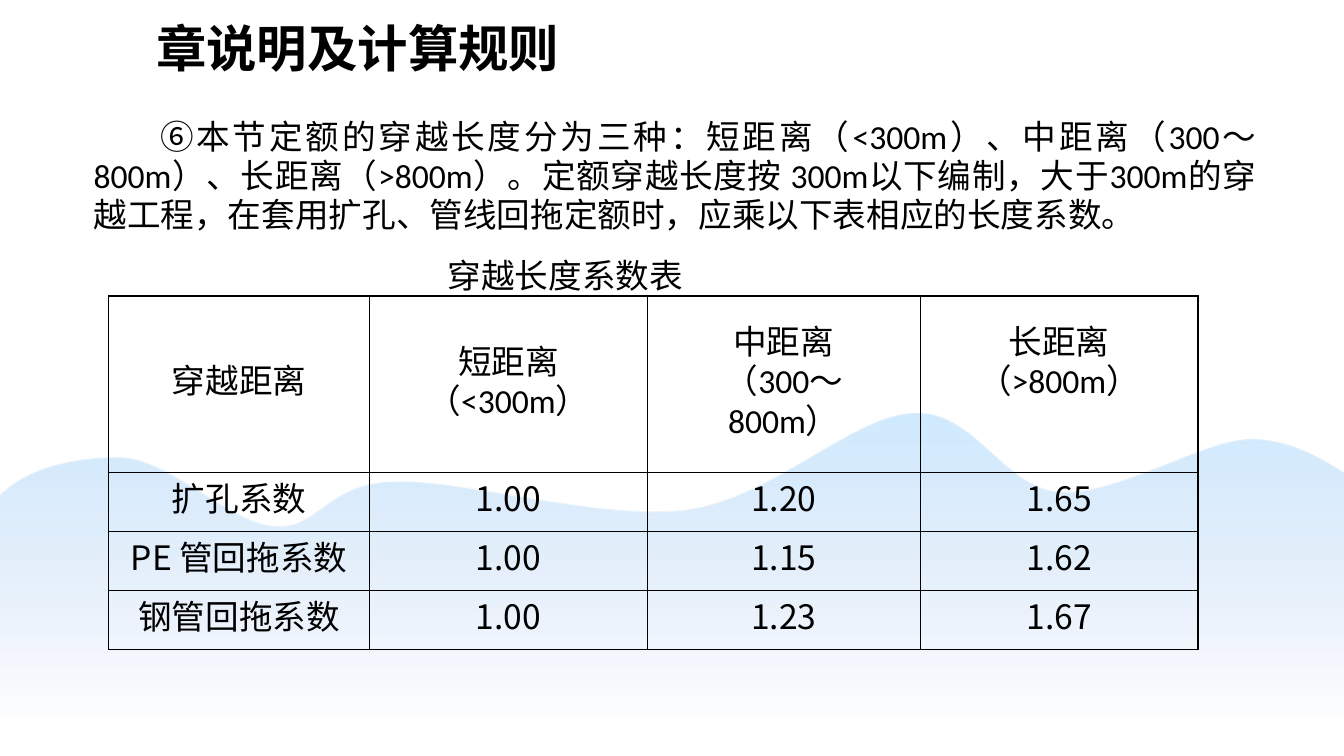
import pptx
import pptx.dml.color
import pptx.enum.text
import pptx.util
from lxml import etree
from pptx.oxml.ns import qn

Pt = pptx.util.Pt
ALIGN = pptx.enum.text.PP_ALIGN
CJK_FONT = "Noto Sans CJK SC"


def color(hex_string):
    return pptx.dml.color.RGBColor.from_string(hex_string)


def style(paragraph, size, font_name, alignment, line_spacing):
    font = paragraph.font
    font.size, font.name = Pt(size), font_name
    font.color.rgb = color("000000")
    east_asian = etree.Element(qn("a:ea"), typeface=CJK_FONT)
    font._element.find(qn("a:latin")).addnext(east_asian)
    paragraph.alignment = alignment
    paragraph.line_spacing = line_spacing


presentation = pptx.Presentation()
presentation.slide_width, presentation.slide_height = Pt(960), Pt(540)
slide = presentation.slides.add_slide(presentation.slide_layouts[6])

# Wave: each curve is two control points and an end point
wave_left, wave_top, wave_width, wave_height = -57.6, 295.2, 1059.8, 308.2
wave_start = (-16.6, 378.7)
wave_curves = [
    ((0, 336.2), (48.2, 326.9), (84.2, 326.9)),
    ((119.5, 326.2), (162.7, 373), (195.1, 375.8)),
    ((228.2, 378.7), (231.8, 345.6), (280.8, 344.2)),
    ((329.8, 342), (428.4, 372.2), (490.3, 364.3)),
    ((552.2, 355.7), (607.7, 297.4), (652.3, 295.2)),
    ((696.2, 293), (716.4, 348.5), (756, 351.4)),
    ((795.6, 355), (855.4, 316.1), (890.6, 313.9)),
    ((925.2, 312.5), (954, 334.8), (967, 342)),
    ((979.9, 349.2), (967, 318.2), (967, 358.6)),
    ((967, 398.2), (1048.3, 541.4), (964.1, 581)),
    ((880.6, 620.6), (627.1, 594.7), (463, 594.7)),
    ((299.5, 594.7), (61.2, 617), (-18.7, 581)),
    ((-98.6, 545), (-33.8, 421.2), wave_start),
]
builder = slide.shapes.build_freeform(Pt(wave_start[0]), Pt(wave_start[1]))
builder.add_line_segments([(Pt(x), Pt(y)) for *_, (x, y) in wave_curves], close=True)
wave = builder.convert_to_shape()
wave.left, wave.top = Pt(wave_left), Pt(wave_top)
wave.width, wave.height = Pt(wave_width), Pt(wave_height)
outline = next(wave._element.iter(qn("a:path")))
outline.set("w", str(Pt(wave_width)))
outline.set("h", str(Pt(wave_height)))
for segment in list(outline):
    outline.remove(segment)
segments = [("a:moveTo", [wave_start])]
segments += [("a:cubicBezTo", points) for points in wave_curves]
for tag, points in segments:
    segment = etree.SubElement(outline, qn(tag))
    for x, y in points:
        etree.SubElement(segment, qn("a:pt"),
                         x=str(Pt(x - wave_left)), y=str(Pt(y - wave_top)))
etree.SubElement(outline, qn("a:close"))
wave.shadow.inherit = False
wave.line.fill.background()
wave.fill.gradient()
wave.fill.gradient_angle = 270
wave_stops = [(0, "2CA2FA", 22), (0.71, "064EC4", 0)]
for stop, (position, hex_string, opacity) in zip(wave.fill.gradient_stops, wave_stops):
    stop.position = position
    stop.color.rgb = color(hex_string)
    color_element = stop._gs.find(qn("a:srgbClr"))
    etree.SubElement(color_element, qn("a:alpha"), val=str(opacity * 1000))

# Title
title = slide.shapes.add_textbox(Pt(104.5), Pt(8.6), Pt(306.7), Pt(51))
title.text_frame.word_wrap = False
title.text_frame.auto_size = pptx.enum.text.MSO_AUTO_SIZE.SHAPE_TO_FIT_TEXT
paragraph = title.text_frame.paragraphs[0]
paragraph.text = "章说明及计算规则"
style(paragraph, 36, "Arial", ALIGN.LEFT, 1.0)
paragraph.font.bold = True

# Rule text and table caption, with first-line indents
body = slide.shapes.add_textbox(Pt(59.8), Pt(80), Pt(844.5), Pt(426))
body.text_frame.word_wrap = True
body_paragraphs = [
    ("⑥本节定额的穿越长度分为三种：短距离（<300m）、中距离（300～800m）、"
     "长距离（>800m）。定额穿越长度按 300m以下编制，大于300m的穿越工程，"
     "在套用扩孔、管线回拖定额时，应乘以下表相应的长度系数。",
     "Calibri", Pt(28), 47.5),
    ("穿越长度系数表", "Arial", 1.5, 253),
]
for index, (text, font_name, line_spacing, indent) in enumerate(body_paragraphs):
    paragraph = body.text_frame.add_paragraph() if index else body.text_frame.paragraphs[0]
    paragraph.text = text
    style(paragraph, 24, font_name, ALIGN.JUSTIFY, line_spacing)
    paragraph._p.pPr.set("marL", "0")
    paragraph._p.pPr.set("indent", str(Pt(indent)))

# Coefficient table
rows = [
    ["穿越距离", "短距离\v（<300m）", "中距离\v（300～\v800m）", "长距离\v（>800m）"],
    ["扩孔系数", "1.00", "1.20", "1.65"],
    ["PE 管回拖系数", "1.00", "1.15", "1.62"],
    ["钢管回拖系数", "1.00", "1.23", "1.67"],
]
column_widths = [186.5, 198.5, 194.8, 198.4]
row_heights = [125.8, 42.3, 42.3, 42.2]
table = slide.shapes.add_table(
    len(rows), len(column_widths), Pt(77.5), Pt(211.5),
    Pt(sum(column_widths)), Pt(sum(row_heights))).table
table.first_row = table.horz_banding = False
for column, width in zip(table.columns, column_widths):
    column.width = Pt(width)
for row, height, texts in zip(table.rows, row_heights, rows):
    row.height = Pt(height)
    for cell, text in zip(row.cells, texts):
        cell.margin_left = cell.margin_right = Pt(5)
        cell.margin_top = cell.margin_bottom = 0
        cell.vertical_anchor = pptx.enum.text.MSO_ANCHOR.MIDDLE
        paragraph = cell.text_frame.paragraphs[0]
        paragraph.text = text
        font_name = CJK_FONT if text[0].isascii() else "Calibri"
        style(paragraph, 24, font_name, ALIGN.CENTER, Pt(28))
        cell_properties = cell._tc.get_or_add_tcPr()
        for side in ("a:lnL", "a:lnR", "a:lnT", "a:lnB"):
            border = etree.SubElement(cell_properties, qn(side), w=str(Pt(1)))
            border_fill = etree.SubElement(border, qn("a:solidFill"))
            etree.SubElement(border_fill, qn("a:srgbClr"), val="000000")
        cell.fill.background()
# The last heading sits one text line higher
table.cell(0, 3).margin_bottom = Pt(28)

presentation.save("out.pptx")
